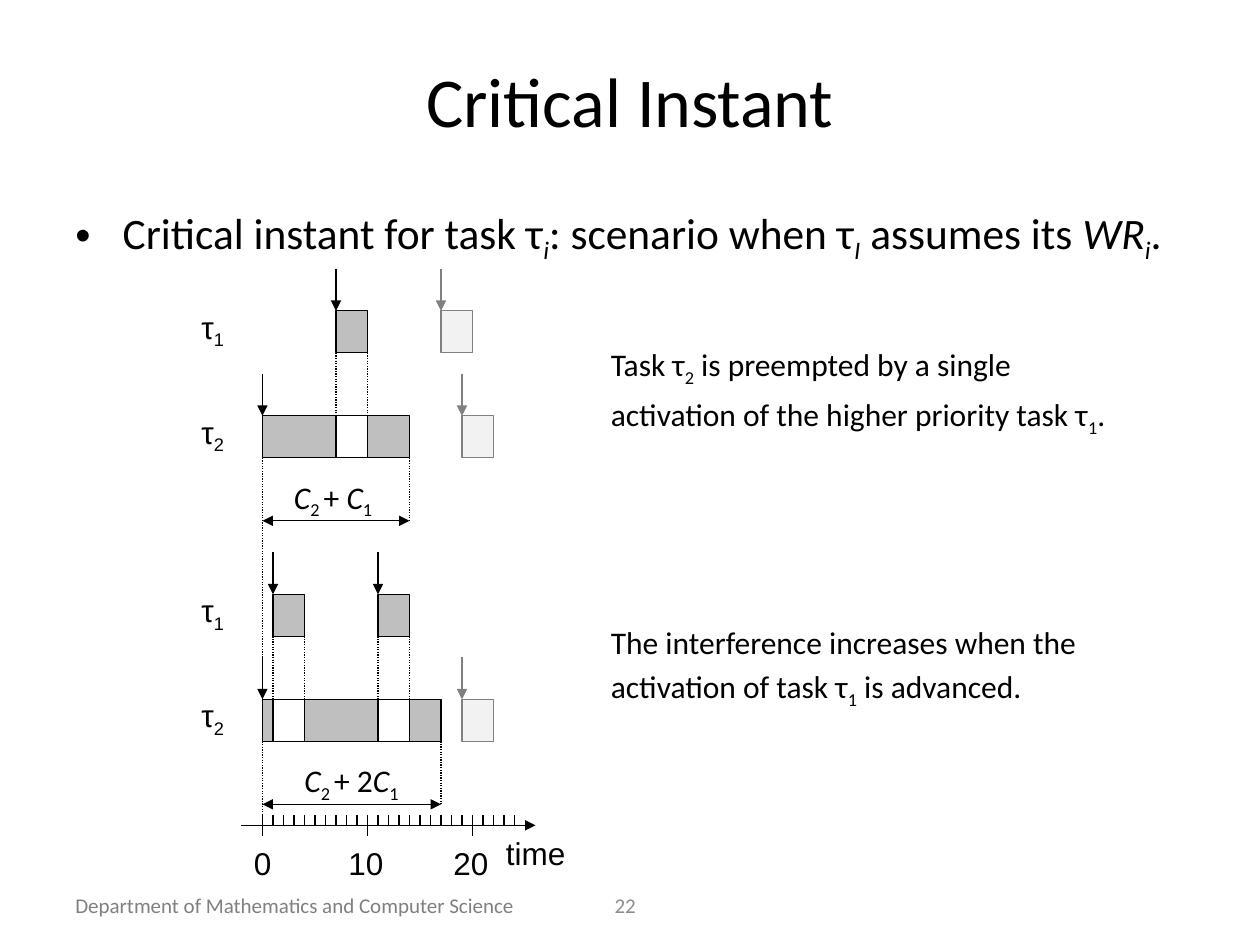
"""Build the "Critical Instant" scheduling slide."""
from dataclasses import dataclass

from lxml import etree
from pptx import Presentation
from pptx.dml.color import RGBColor
from pptx.enum.dml import MSO_LINE
from pptx.enum.shapes import MSO_CONNECTOR, MSO_SHAPE
from pptx.enum.text import MSO_ANCHOR, PP_ALIGN
from pptx.oxml.ns import qn
from pptx.util import Pt

PX = 7620
STRAIGHT, RECT = MSO_CONNECTOR.STRAIGHT, MSO_SHAPE.RECTANGLE
DOTTED = MSO_LINE.ROUND_DOT
LEFT, CENTER = PP_ALIGN.LEFT, PP_ALIGN.CENTER
TOP, MIDDLE = MSO_ANCHOR.TOP, MSO_ANCHOR.MIDDLE

ORIGIN, UNIT, AXIS_Y = 250, 10, 786
BAR_HEIGHT, ROW_STEP, SPAN_DROP = 40, 100, 100


@dataclass(frozen=True)
class Theme:
    ink: str = "000000"
    muted: str = "808080"
    page_number: str = "8C8C8C"
    busy: str = "BFBFBF"
    later: str = "F2F2F2"
    paper: str = "FFFFFF"
    body_font: str = "Calibri"
    diagram_font: str = "Arial"
    title_size: float = 40
    bullet_size: float = 24.8
    label_size: float = 18
    footer_size: float = 12
    hairline: float = 0.75


@dataclass(frozen=True)
class Scenario:
    top: int
    high_jobs: tuple
    high_later: tuple
    low_jobs: tuple
    finish: int
    demand: list
    demand_left: int
    note: list
    note_top: int


def tau(index):
    return [("τ", ""), (index, "s")]


def time_x(t):
    return ORIGIN + UNIT * t


SCENARIOS = (
    Scenario(
        296, ((7, 3),), ((17, 3),), ((0, 7), (10, 4)), 14,
        [("C", "i"), ("2 ", "s"), ("+ ", ""), ("C", "i"), ("1", "s")], 268,
        [[("Task τ", ""), ("2", "s"), (" is preempted by a single", "")],
         [("activation of the higher priority task τ", ""), ("1", "s"), (".", "")]], 323),
    Scenario(
        566, ((1, 3), (11, 3)), (), ((0, 1), (4, 7), (14, 3)), 17,
        [("C", "i"), ("2 ", "s"), ("+ 2", ""), ("C", "i"), ("1", "s")], 278,
        [[("The interference increases when the", "")],
         [("activation of task τ", ""), ("1", "s"), (" is advanced.", "")]], 587),
)

DEFINITION = [
    ("Critical instant for task τ", ""), ("i", "is"), (": scenario when τ", ""), ("I", "is"),
    (" assumes its ", ""), ("WR", "i"), ("i", "is"), (".", "")]


class SlideBuilder:
    def __init__(self, slide, theme):
        self.slide, self.theme = slide, theme

    def place(self, shape, box):
        for side, length in zip(("left", "top", "width", "height"), box):
            setattr(shape, side, length * PX)

    def fill_text(self, frame, paragraphs, size, font=None, color=None,
                  align=LEFT, anchor=TOP, bullet=False):
        frame.word_wrap, frame.vertical_anchor = True, anchor
        for number, runs in enumerate(paragraphs):
            paragraph = frame.add_paragraph() if number else frame.paragraphs[0]
            paragraph.alignment = align
            if number:
                paragraph.space_before = Pt(size * 0.2)
            if bullet:
                props = paragraph._p.get_or_add_pPr()
                props.set("marL", str(45 * PX))
                props.set("indent", str(-45 * PX))
                etree.SubElement(props, qn("a:buFont")).set("typeface", "Arial")
                etree.SubElement(props, qn("a:buChar")).set("char", "•")
            for words, style in runs:
                run = paragraph.add_run()
                run.text = words
                values = {"name": font or self.theme.body_font, "size": Pt(size),
                          "italic": "i" in style, "bold": False}
                for attribute, value in values.items():
                    setattr(run.font, attribute, value)
                run.font.color.rgb = RGBColor.from_string(color or self.theme.ink)
                if "s" in style:
                    run._r.get_or_add_rPr().set("baseline", "-25000")

    def title(self, words, box):
        heading = self.slide.shapes.title
        self.place(heading, box)
        self.fill_text(heading.text_frame, [[(words, "")]], self.theme.title_size,
                       align=CENTER, anchor=MIDDLE)

    def text(self, paragraphs, box, size, **styling):
        area = self.slide.shapes.add_textbox(*(length * PX for length in box))
        self.fill_text(area.text_frame, paragraphs, size, **styling)

    def diagram_label(self, runs, box):
        self.text([runs], box, self.theme.label_size, font=self.theme.diagram_font)

    def bar(self, start, duration, top, fill, outline=None):
        box = (time_x(start), top, duration * UNIT, BAR_HEIGHT)
        job = self.slide.shapes.add_shape(RECT, *(length * PX for length in box))
        job.shadow.inherit = False
        job.fill.solid()
        job.fill.fore_color.rgb = RGBColor.from_string(fill)
        job.line.color.rgb = RGBColor.from_string(outline or self.theme.ink)
        job.line.width = Pt(self.theme.hairline)

    def line(self, x1, y1, x2, y2, color=None, dash=None, heads=()):
        stroke = self.slide.shapes.add_connector(
            STRAIGHT, *(length * PX for length in (x1, y1, x2, y2)))
        stroke.line.color.rgb = RGBColor.from_string(color or self.theme.ink)
        stroke.line.width = Pt(self.theme.hairline)
        if dash:
            stroke.line.dash_style = dash
        for end in heads:
            etree.SubElement(stroke.line._get_or_add_ln(), qn(end)).set("type", "triangle")
        etree.SubElement(stroke._element.spPr, qn("a:effectLst"))

    def release(self, t, top, color=None):
        x = time_x(t)
        self.line(x, top - BAR_HEIGHT, x, top, color, heads=("a:tailEnd",))

    def time_axis(self):
        self.line(230, AXIS_Y, 510, AXIS_Y, heads=("a:tailEnd",))
        for t in range(25):
            x, major = time_x(t), t % 10 == 0
            self.line(x, AXIS_Y - 10, x, AXIS_Y + 10 * major)
            if major:
                half = 30 if t else 20
                self.diagram_label([(str(t), "")], (x - half, 798, 2 * half, 48))
        self.diagram_label([("time", "")], (470, 788, 90, 48))

    def scenario(self, case):
        theme, high = self.theme, case.top
        low = high + ROW_STEP
        for index, top in (("1", high), ("2", low)):
            self.diagram_label(tau(index), (180, top - 9, 140, 48))
        for start, duration in case.low_jobs:
            self.bar(start, duration, low, theme.busy)
        for start, duration in case.high_jobs:
            self.bar(start, duration, high, theme.busy)
            self.bar(start, duration, low, theme.paper)
            self.release(start, high)
            for t in (start, start + duration):
                self.line(time_x(t), high + BAR_HEIGHT, time_x(t), low, dash=DOTTED)
        self.release(0, low)
        for top, jobs in ((high, case.high_later), (low, ((19, 3),))):
            for start, duration in jobs:
                self.bar(start, duration, top, theme.later, theme.muted)
                self.release(start, top, theme.muted)
        end, span_y = time_x(case.finish), low + SPAN_DROP
        self.line(end, low + BAR_HEIGHT, end, span_y, dash=DOTTED)
        self.line(ORIGIN, span_y, end, span_y, heads=("a:headEnd", "a:tailEnd"))
        self.text([case.demand], (case.demand_left, low + 53, 140, 48), theme.label_size)
        self.text(case.note, (570, case.note_top, 540, 92), theme.label_size)


def main():
    deck = Presentation()
    deck.slide_width, deck.slide_height = 1200 * PX, 900 * PX
    theme = Theme()
    page = SlideBuilder(deck.slides.add_slide(deck.slide_layouts[5]), theme)
    page.title("Critical Instant", (60, 36, 1080, 118))
    page.text([DEFINITION], (60, 190, 1080, 64), theme.bullet_size, bullet=True)
    page.time_axis()
    first_low = SCENARIOS[0].top + ROW_STEP
    page.line(ORIGIN, first_low + BAR_HEIGHT, ORIGIN, AXIS_Y, dash=DOTTED)
    for case in SCENARIOS:
        page.scenario(case)
    page.text([[("Department of Mathematics and Computer Science", "")]],
              (60, 844, 470, 36), theme.footer_size, color=theme.muted)
    page.text([[("22", "")]], (530, 844, 131, 36), theme.footer_size,
              color=theme.page_number, align=CENTER, anchor=MIDDLE)
    deck.save("out.pptx")


if __name__ == "__main__":
    main()
